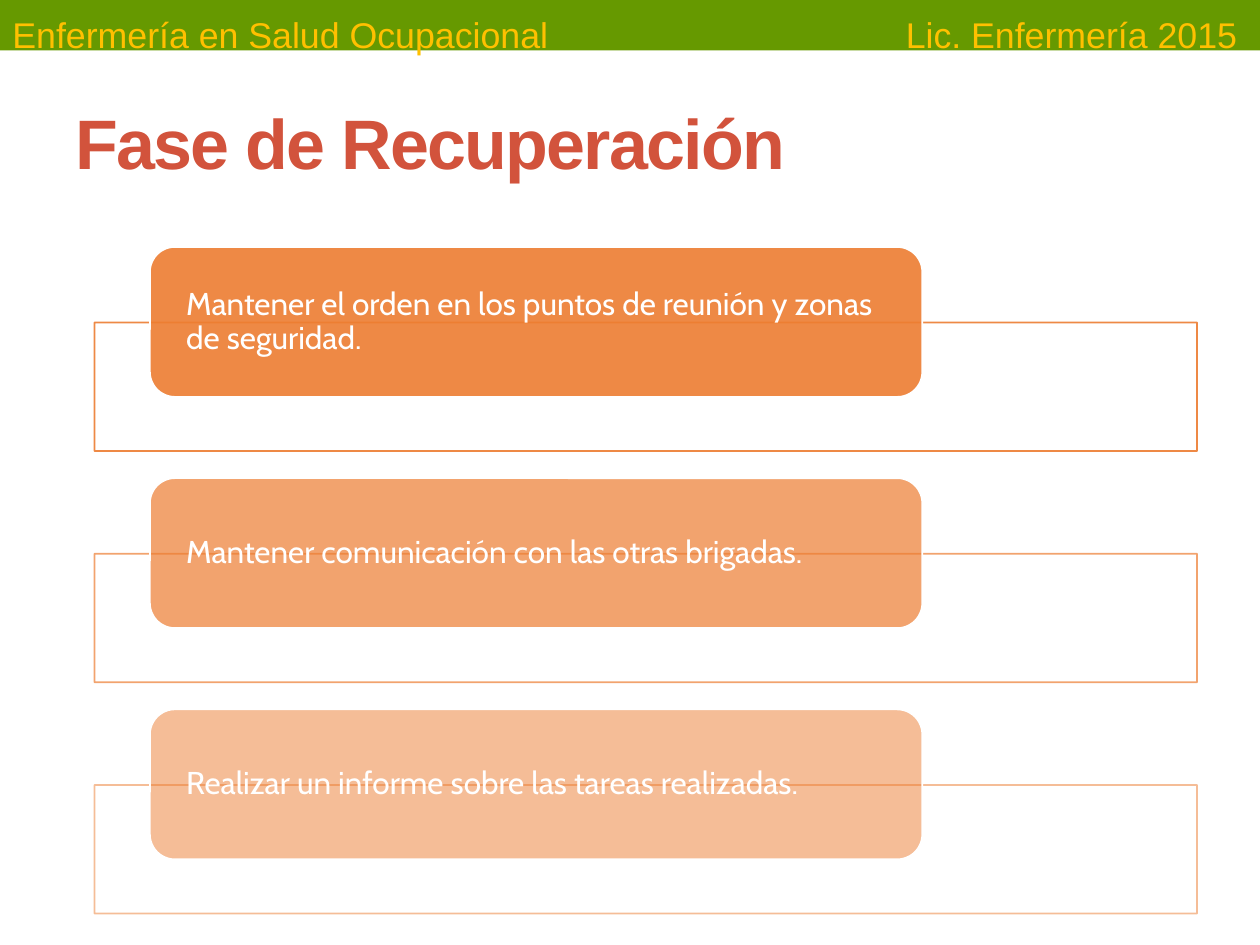
from dataclasses import dataclass

from lxml.etree import SubElement
from pptx import Presentation
from pptx.dml.color import RGBColor
from pptx.enum.shapes import MSO_SHAPE as Shape
from pptx.enum.text import MSO_ANCHOR as Anchor, PP_ALIGN as Align
from pptx.oxml.ns import qn
from pptx.util import Inches, Pt

TITLE = "Fase de Recuperación"
HEADINGS = [  # text, left, width
    ("Enfermería en Salud Ocupacional", 0, 4.61),
    ("Lic. Enfermería 2015", 7.09, 2.91),
]
TASKS = [  # text, opacity in percent
    ("Mantener el orden en los puntos de reunión y zonas de seguridad.", 90),
    ("Mantener comunicación con las otras brigadas.", 70),
    ("Realizar un informe sobre las tareas realizadas.", 50),
]


@dataclass(frozen=True)
class Theme:
    band: RGBColor = RGBColor.from_string("669900")
    heading: RGBColor = RGBColor.from_string("FFC000")
    title: RGBColor = RGBColor.from_string("D2533C")
    accent: RGBColor = RGBColor.from_string("ED7D31")
    white: RGBColor = RGBColor.from_string("FFFFFF")
    head_font: str = "Arial"
    task_font: str = "Cabin"
    heading_size: float = 20.4
    title_size: float = 40
    task_size: float = 18


THEME = Theme()
FIRST_CARD_TOP, LAST_CARD_TOP = 1.96, 5.63
FRAME_DROP = 0.6  # from the top of a card to the top of its frame


def paint(fill, color, opacity=100):
    fill.solid()
    fill.fore_color.rgb = color
    if opacity < 100:
        color_xml = fill._xPr.find(qn("a:solidFill"))[0]
        SubElement(color_xml, qn("a:alpha"), val=str(opacity * 1000))


def add_block(slide, kind, left, top, width, height):
    block = slide.shapes.add_shape(
        kind, Inches(left), Inches(top), Inches(width), Inches(height))
    block.shadow.inherit = False
    return block


def set_font(paragraph, name, size, color):
    font = paragraph.font
    font.name, font.size, font.color.rgb = name, Pt(size), color


def add_header(slide):
    band = add_block(slide, Shape.RECTANGLE, 0, 0, 10, 0.4)
    paint(band.fill, THEME.band)
    band.line.fill.background()
    for text, left, width in HEADINGS:
        heading = slide.shapes.add_textbox(
            Inches(left), Inches(0.05), Inches(width), Inches(0.39))
        heading.text_frame.word_wrap = True
        paragraph = heading.text_frame.paragraphs[0]
        paragraph.text = text
        paragraph.space_before = Pt(2)
        set_font(paragraph, THEME.head_font, THEME.heading_size, THEME.heading)


def add_title(slide):
    title = slide.shapes.title
    title.left, title.top = Inches(0.5), Inches(0.58)
    title.width, title.height = Inches(9), Inches(1.08)
    title.text_frame.text = TITLE
    title.text_frame.vertical_anchor = Anchor.MIDDLE
    paragraph = title.text_frame.paragraphs[0]
    paragraph.alignment = Align.LEFT
    set_font(paragraph, THEME.head_font, THEME.title_size, THEME.title)
    paragraph.font.bold = True
    paragraph.runs[0].font._element.set("spc", "-100")


def add_task(slide, text, opacity, top):
    frame = add_block(slide, Shape.RECTANGLE, 0.75, top + FRAME_DROP, 8.75, 1.02)
    paint(frame.fill, THEME.white, 90)
    paint(frame.line.fill, THEME.accent, opacity)
    frame.line.width = Pt(1)

    card = add_block(slide, Shape.ROUNDED_RECTANGLE, 1.19, top, 6.13, 1.19)
    paint(card.fill, THEME.accent, opacity)
    paint(card.line.fill, THEME.white)
    card.line.width = Pt(1)

    body = card.text_frame
    body.word_wrap = True
    body.vertical_anchor = Anchor.MIDDLE
    # The rounded corners already inset the text by about 0.06
    body.margin_left = body.margin_right = Inches(0.23)
    body.margin_top = body.margin_bottom = 0
    paragraph = body.paragraphs[0]
    paragraph.text = text
    paragraph.alignment = Align.LEFT
    paragraph.line_spacing = 0.9
    set_font(paragraph, THEME.task_font, THEME.task_size, THEME.white)


def main():
    deck = Presentation()
    deck.slide_width, deck.slide_height = Inches(10), Inches(7.5)
    slide = deck.slides.add_slide(deck.slide_layouts[5])
    add_header(slide)
    add_title(slide)
    pitch = (LAST_CARD_TOP - FIRST_CARD_TOP) / (len(TASKS) - 1)
    for row, (text, opacity) in enumerate(TASKS):
        add_task(slide, text, opacity, FIRST_CARD_TOP + row * pitch)
    deck.save("out.pptx")


if __name__ == "__main__":
    main()
